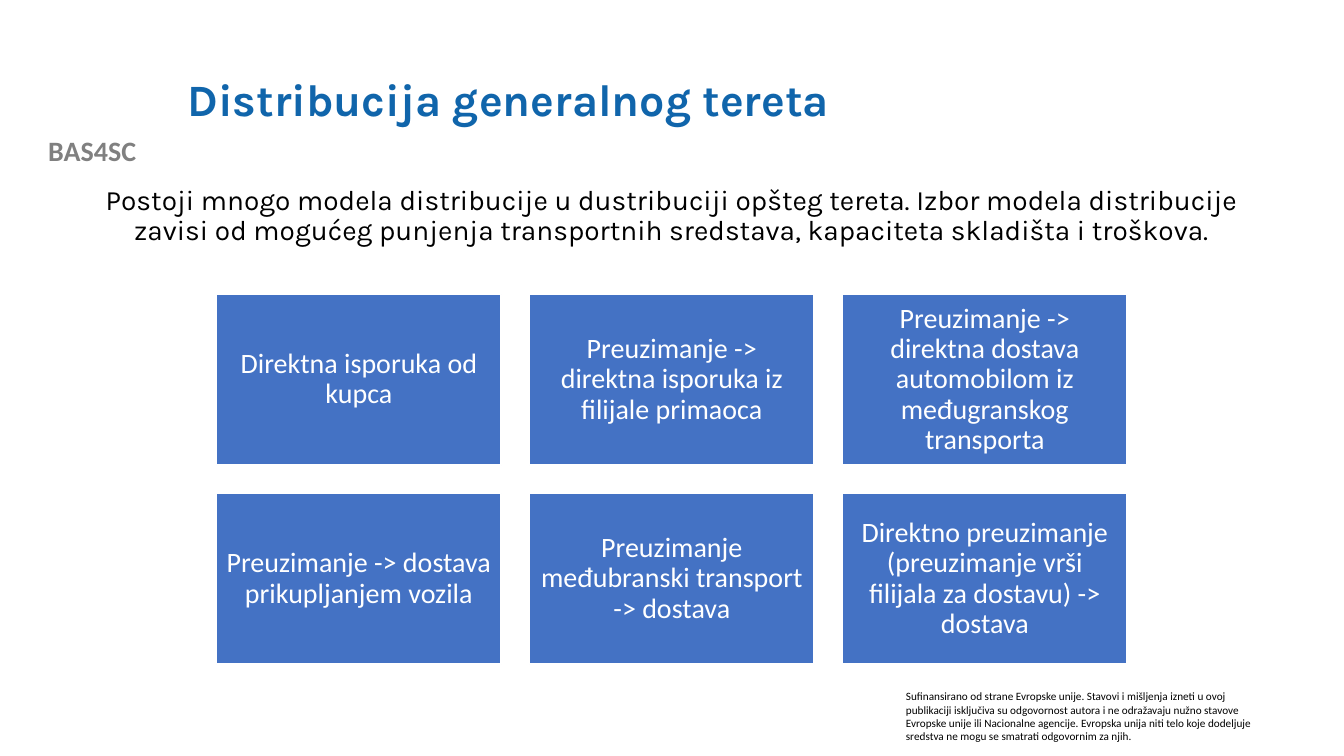
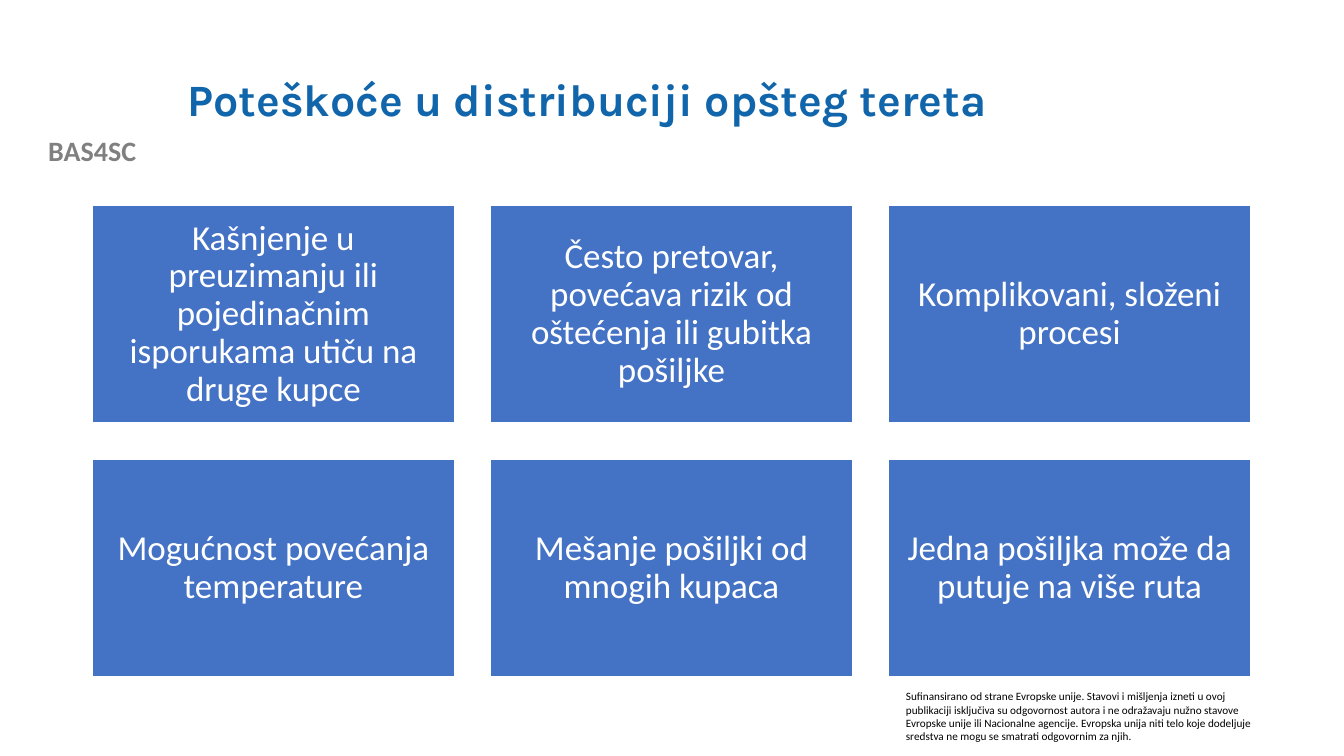
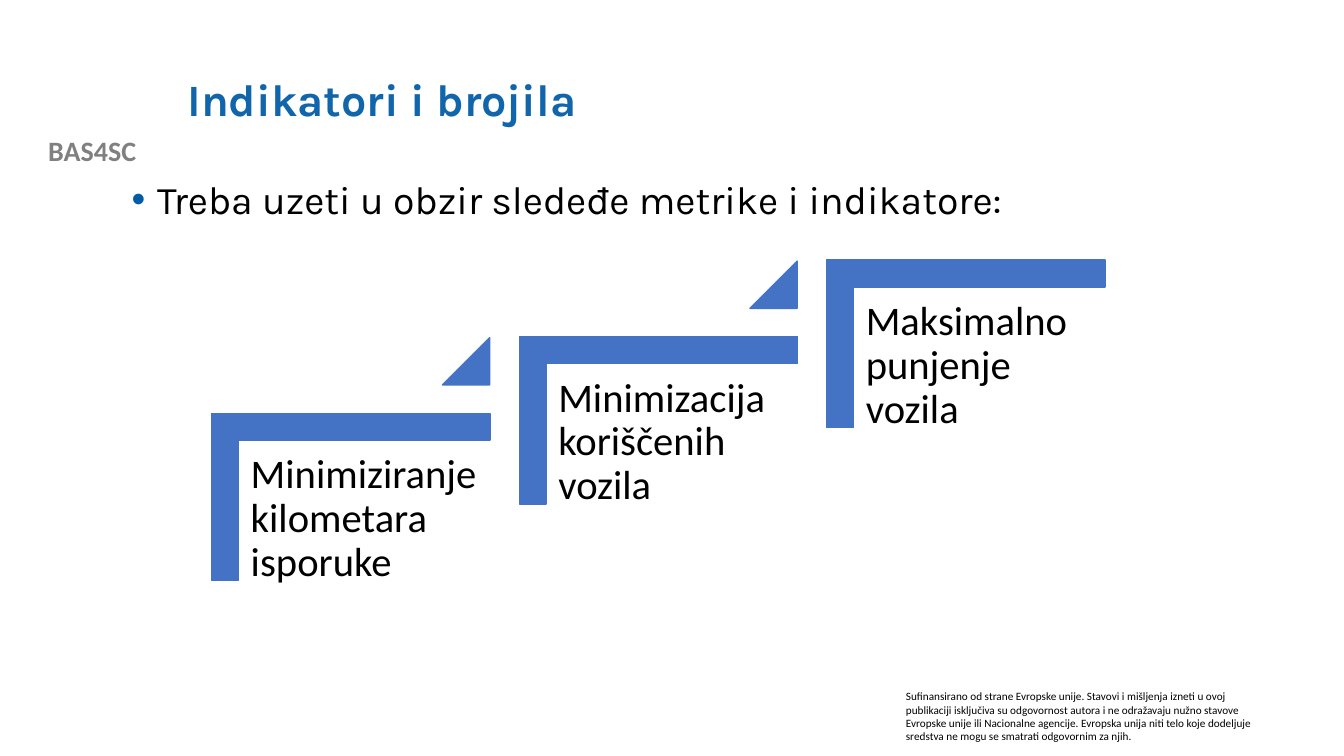
import pptx
import pptx.dml.color
import pptx.enum.shapes
import pptx.enum.text
import pptx.oxml
import pptx.oxml.ns
import pptx.util

Cm = pptx.util.Cm
Pt = pptx.util.Pt
SHAPE = pptx.enum.shapes.MSO_SHAPE
ALIGN = pptx.enum.text.PP_ALIGN
ANCHOR = pptx.enum.text.MSO_ANCHOR

BLUE, TITLE_BLUE, BULLET_BLUE = "4472C4", "1065AB", "015BA6"
WHITE, BLACK, GREY = "FFFFFF", "000000", "808080"
BODY_FONT, HEAD_FONT = "Calibri", "Karla"

FUNDING = (
    "Sufinansirano od strane Evropske unije. Stavovi i mišljenja izneti u ovoj "
    "publikaciji isključiva su odgovornost autora i ne odražavaju nužno stavove "
    "Evropske unije ili Nacionalne agencije. Evropska unija niti telo koje dodeljuje "
    "sredstva ne mogu se smatrati odgovornim za njih."
)


def paint(color_format, value):
    """Apply a hex colour to a fill's, line's or font's colour."""
    color_format.rgb = pptx.dml.color.RGBColor.from_string(value)


def write(sp, text, size, color, font=BODY_FONT, bold=False, align=ALIGN.LEFT,
          anchor=ANCHOR.TOP, spacing=0.9, margin=None):
    """Put one formatted paragraph in a shape and return the paragraph."""
    tf = sp.text_frame
    tf.text = text
    tf.word_wrap = True
    tf.auto_size = pptx.enum.text.MSO_AUTO_SIZE.NONE
    tf.vertical_anchor = anchor
    if margin is not None:
        tf.margin_left = tf.margin_right = tf.margin_top = tf.margin_bottom = Cm(margin)
    p = tf.paragraphs[0]
    p.alignment = align
    p.line_spacing = spacing
    r = p.runs[0]
    r.font.name = font
    r.font.size = Pt(size)
    r.font.bold = bold
    paint(r.font.color, color)
    return p


prs = pptx.Presentation()
prs.slide_width, prs.slide_height = Cm(33.87), Cm(19.05)

# Parts shared by every slide
slides = []
for title in ("Distribucija generalnog tereta",
              "Poteškoće u distribuciji opšteg tereta",
              "Indikatori i brojila"):
    s = prs.slides.add_slide(prs.slide_layouts[5])
    sp = s.shapes.title
    sp.left, sp.top, sp.width, sp.height = Cm(4.47), Cm(1.02), Cm(27.08), Cm(3.1)
    write(sp, title, 32, TITLE_BLUE, HEAD_FONT, bold=True, anchor=ANCHOR.MIDDLE)
    project = s.shapes.add_textbox(0, Cm(3.25), Cm(4.65), Cm(1.12))
    write(project, "BAS4SC", 20, GREY, bold=True, align=ALIGN.CENTER, spacing=1.0)
    funding = s.shapes.add_textbox(Cm(22.58), Cm(17.25), Cm(9.53), Cm(1.63))
    write(funding, FUNDING, 8, BLACK, spacing=1.0)
    slides.append(s)
models_slide, difficulties_slide, indicators_slide = slides

# Grids of boxes, three to a row, with gaps of a tenth of the box width
grids = [
    (models_slide, 5.46, 7.42, 7.17, 4.3, 20, 0.2, [
        "Direktna isporuka od kupca",
        "Preuzimanje -> direktna isporuka iz filijale primaoca",
        "Preuzimanje -> direktna dostava automobilom iz međugranskog transporta",
        "Preuzimanje -> dostava prikupljanjem vozila",
        "Preuzimanje međubranski transport -> dostava",
        "Direktno preuzimanje (preuzimanje vrši filijala za dostavu) -> dostava",
    ]),
    (difficulties_slide, 2.33, 5.18, 9.12, 5.48, 25, 0.25, [
        "Kašnjenje u preuzimanju ili pojedinačnim isporukama utiču na druge kupce",
        "Često pretovar, povećava rizik od oštećenja ili gubitka pošiljke",
        "Komplikovani, složeni procesi",
        "Mogućnost povećanja temperature",
        "Mešanje pošiljki od mnogih kupaca",
        "Jedna pošiljka može da putuje na više ruta",
    ]),
]
for s, left, top, width, height, size, margin, labels in grids:
    gap = 0.1 * width
    for i, label in enumerate(labels):
        row, col = divmod(i, 3)
        box = s.shapes.add_shape(
            SHAPE.RECTANGLE, Cm(left + col * (width + gap)), Cm(top + row * (height + gap)),
            Cm(width), Cm(height))
        box.shadow.inherit = False
        box.fill.solid()
        paint(box.fill.fore_color, BLUE)
        paint(box.line.color, WHITE)
        box.line.width = Pt(1)
        write(box, label, size, WHITE, align=ALIGN.CENTER, anchor=ANCHOR.MIDDLE, margin=margin)

# Introductory texts
intro = models_slide.shapes.add_textbox(Cm(2.33), Cm(4.57), Cm(29.21), Cm(2.6))
write(intro, "Postoji mnogo modela distribucije u dustribuciji opšteg tereta. Izbor modela "
      "distribucije zavisi od mogućeg punjenja transportnih sredstava, kapaciteta "
      "skladišta i troškova.", 20, BLACK, HEAD_FONT, align=ALIGN.CENTER)

intro = indicators_slide.shapes.add_textbox(Cm(3.07), Cm(4.42), Cm(29.21), Cm(1.6))
p = write(intro, "Treba uzeti u obzir sledeđe metrike i indikatore:", 28, BLACK, HEAD_FONT)
pPr = p._p.get_or_add_pPr()
pPr.set("marL", str(Cm(0.64)))
pPr.set("indent", str(-Cm(0.64)))
ns = pptx.oxml.ns.nsdecls("a")
for xml in (f'<a:buClr {ns}><a:srgbClr val="{BULLET_BLUE}"/></a:buClr>',
            f'<a:buFont {ns} typeface="Arial"/>',
            f'<a:buChar {ns} char="•"/>'):
    pPr.append(pptx.oxml.parse_xml(xml))

# Staircase of indicators, with a triangle between steps
steps = ["Minimiziranje kilometara isporuke",
         "Minimizacija koriščenih vozila",
         "Maksimalno punjenje vozila"]
shapes = indicators_slide.shapes
for i, label in enumerate(steps):
    left, top = 6.73 + 7.75 * i, 9.02 - 1.93 * i
    corner = shapes.add_shape(SHAPE.CORNER, Cm(left), Cm(top), Cm(4.22), Cm(7.01))
    corner.rotation = 90
    corner.adjustments[0] = corner.adjustments[1] = 0.16
    parts = [corner]
    caption = shapes.add_textbox(Cm(left - 0.71), Cm(top + 2.11), Cm(6.32), Cm(5.56))
    write(caption, label, 29, BLACK, margin=0.3)
    if i < len(steps) - 1:
        triangle = shapes.add_shape(
            SHAPE.ISOSCELES_TRIANGLE, Cm(left + 4.42), Cm(top - 0.51), Cm(1.19), Cm(1.19))
        triangle.adjustments[0] = 1
        parts.append(triangle)
    for sp in parts:
        sp.shadow.inherit = False
        sp.fill.solid()
        paint(sp.fill.fore_color, BLUE)
        paint(sp.line.color, BLUE)
        sp.line.width = Pt(1)

prs.save("out.pptx")
